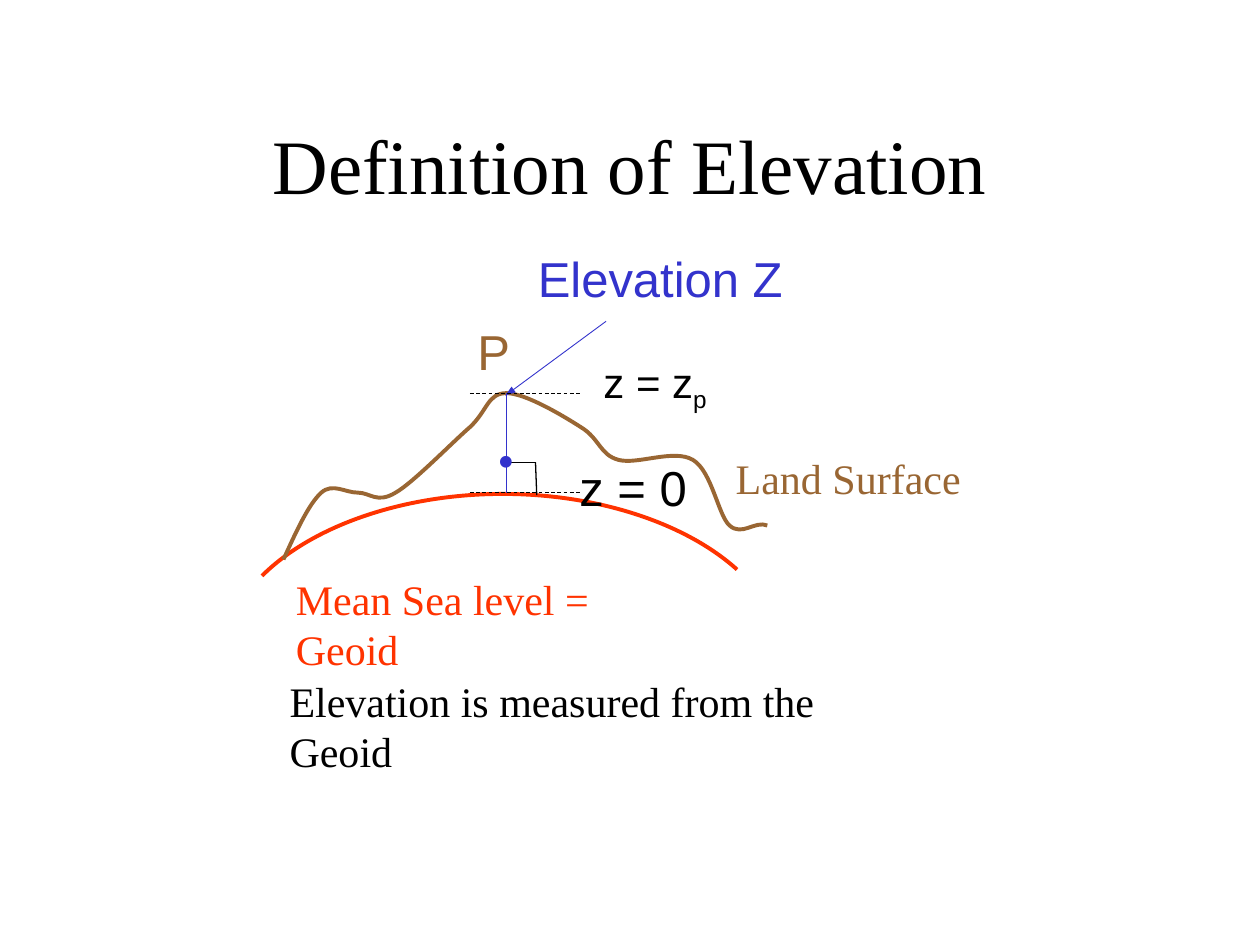
import pptx
import pptx.util
import pptx.dml.color
import pptx.enum.dml
import pptx.enum.shapes
import pptx.enum.text
import pptx.oxml.ns
import lxml.etree

SERIF, SANS = "Times New Roman", "Arial"
BLACK, BLUE, BROWN, RED = "000000", "3333CC", "996633", "FF3300"
WIDTH, HEIGHT = 10, 7.5
PEAK_X, PEAK_Y, SEA_Y = 4.02, 3.12, 3.91
LEVEL_LEFT, LEVEL_RIGHT = 3.73, 4.61
UNITS = 1000  # freeform units per inch

TITLE = ("Definition of Elevation", "", (0.75, 0.67, 8.5, 1.25), 44, SERIF, BLACK, True)

# Curves: color, start point, then cubic segments (control, control, end)
CURVES = [
    (RED, (2.08, 4.57), [
        ((2.48, 4.17), (3.21, 3.92), (3.99, 3.92)),
        ((4.74, 3.92), (5.44, 4.15), (5.85, 4.52))]),
    (BROWN, (2.25, 4.44), [
        ((2.35, 4.22), (2.45, 4), (2.55, 3.91)),
        ((2.64, 3.83), (2.74, 3.91), (2.84, 3.91)),
        ((2.94, 3.91), (2.99, 4), (3.14, 3.91)),
        ((3.28, 3.83), (3.58, 3.52), (3.73, 3.39)),
        ((3.87, 3.26), (3.87, 3.12), (4.02, 3.12)),
        ((4.17, 3.12), (4.47, 3.3), (4.61, 3.39)),
        ((4.76, 3.48), (4.76, 3.61), (4.91, 3.65)),
        ((5.06, 3.69), (5.35, 3.56), (5.5, 3.65)),
        ((5.65, 3.74), (5.7, 4.09), (5.79, 4.17)),
        ((5.89, 4.26), (5.99, 4.13), (6.09, 4.17))]),
]

# Lines: start, end, color, width, style
LINES = [
    ((4.81, 2.55), (4.01, 3.14), BLUE, 0.5, "arrow"),
    ((PEAK_X, PEAK_Y), (PEAK_X, SEA_Y), BLUE, 0.75, ""),
    ((LEVEL_LEFT, PEAK_Y), (LEVEL_RIGHT, PEAK_Y), BLACK, 0.5, "dash"),
    ((LEVEL_LEFT, SEA_Y), (LEVEL_RIGHT, SEA_Y), BLACK, 0.5, "dash"),
    ((4, 3.67), (4.25, 3.67), BLACK, 0.75, ""),
    ((4.25, 3.67), (4.26, 3.93), BLACK, 0.75, ""),
]

# Labels: text, subscript, box, size, font, color, wrap
LABELS = [
    ("Elevation Z", "", (4.17, 1.92, 2.15, 0.57), 28, SANS, BLUE, False),
    ("•", "", (3.85, 3.36, 0.34, 0.57), 28, SERIF, BLUE, False),
    ("P", "", (3.69, 2.5, 0.46, 0.57), 28, SANS, BROWN, False),
    ("z = z", "p", (4.69, 2.78, 1.18, 0.5), 24, SANS, BLACK, True),
    ("z = 0", "", (4.5, 3.58, 1.06, 0.57), 28, SANS, BLACK, False),
    ("Mean Sea level = Geoid", "", (2.25, 4.5, 3.42, 0.5), 24, SERIF, RED, False),
    ("Land Surface", "", (5.74, 3.54, 1.99, 0.5), 24, SERIF, BROWN, False),
    ("Elevation is measured from the Geoid", "", (2.2, 5.31, 5.2, 0.5),
     24, SERIF, BLACK, True),
]

inch = pptx.util.Inches
qn = pptx.oxml.ns.qn


def rgb(color):
    return pptx.dml.color.RGBColor.from_string(color)


def add_text(s, text, subscript, box, size, font, color, wrap):
    tf = s.shapes.add_textbox(*map(inch, box)).text_frame
    tf.word_wrap = wrap
    p = tf.paragraphs[0]
    for part in filter(None, (text, subscript)):
        r = p.add_run()
        r.text = part
        for name, value in {"size": pptx.util.Pt(size), "name": font}.items():
            setattr(r.font, name, value)
        r.font.color.rgb = rgb(color)
    if subscript:
        r.font._element.set("baseline", "-25000")
    return tf


def set_line(line, color, width):
    line.color.rgb = rgb(color)
    line.width = pptx.util.Pt(width)


def add_curve(s, color, start, segments):
    points = [(x * UNITS, y * UNITS) for segment in segments for x, y in segment]
    builder = s.shapes.build_freeform(start[0] * UNITS, start[1] * UNITS,
                                      scale=inch(1) / UNITS)
    builder.add_line_segments(points, close=False)
    sp = builder.convert_to_shape()
    # Turn every three straight pieces into one cubic segment
    pieces = list(sp._element.iter(qn("a:lnTo")))
    outline = pieces[0].getparent()
    for i in range(0, len(pieces), 3):
        cubic = lxml.etree.SubElement(outline, qn("a:cubicBezTo"))
        for piece in pieces[i:i + 3]:
            cubic.append(piece[0])
            outline.remove(piece)
    sp.shadow.inherit = False
    sp.fill.background()
    set_line(sp.line, color, 2.25)


def add_line(s, start, end, color, width, style):
    sp = s.shapes.add_connector(pptx.enum.shapes.MSO_CONNECTOR.STRAIGHT,
                                *map(inch, start + end))
    set_line(sp.line, color, width)
    if style == "dash":
        sp.line.dash_style = pptx.enum.dml.MSO_LINE.DASH
    if style == "arrow":
        lxml.etree.SubElement(sp.line._get_or_add_ln(), qn("a:tailEnd"),
                              type="triangle", w="sm", len="med")
    lxml.etree.SubElement(sp._element.spPr, qn("a:effectLst"))


def main():
    prs = pptx.Presentation()
    prs.slide_width, prs.slide_height = inch(WIDTH), inch(HEIGHT)
    s = prs.slides.add_slide(prs.slide_layouts[6])

    # Title
    tf = add_text(s, *TITLE)
    tf.vertical_anchor = pptx.enum.text.MSO_ANCHOR.MIDDLE
    tf.paragraphs[0].alignment = pptx.enum.text.PP_ALIGN.CENTER

    # Geoid and land surface, measuring lines, labels
    for curve in CURVES:
        add_curve(s, *curve)
    for line in LINES:
        add_line(s, *line)
    for label in LABELS:
        tf = add_text(s, *label)
        tf.auto_size = pptx.enum.text.MSO_AUTO_SIZE.SHAPE_TO_FIT_TEXT

    prs.save("out.pptx")


if __name__ == "__main__":
    main()
